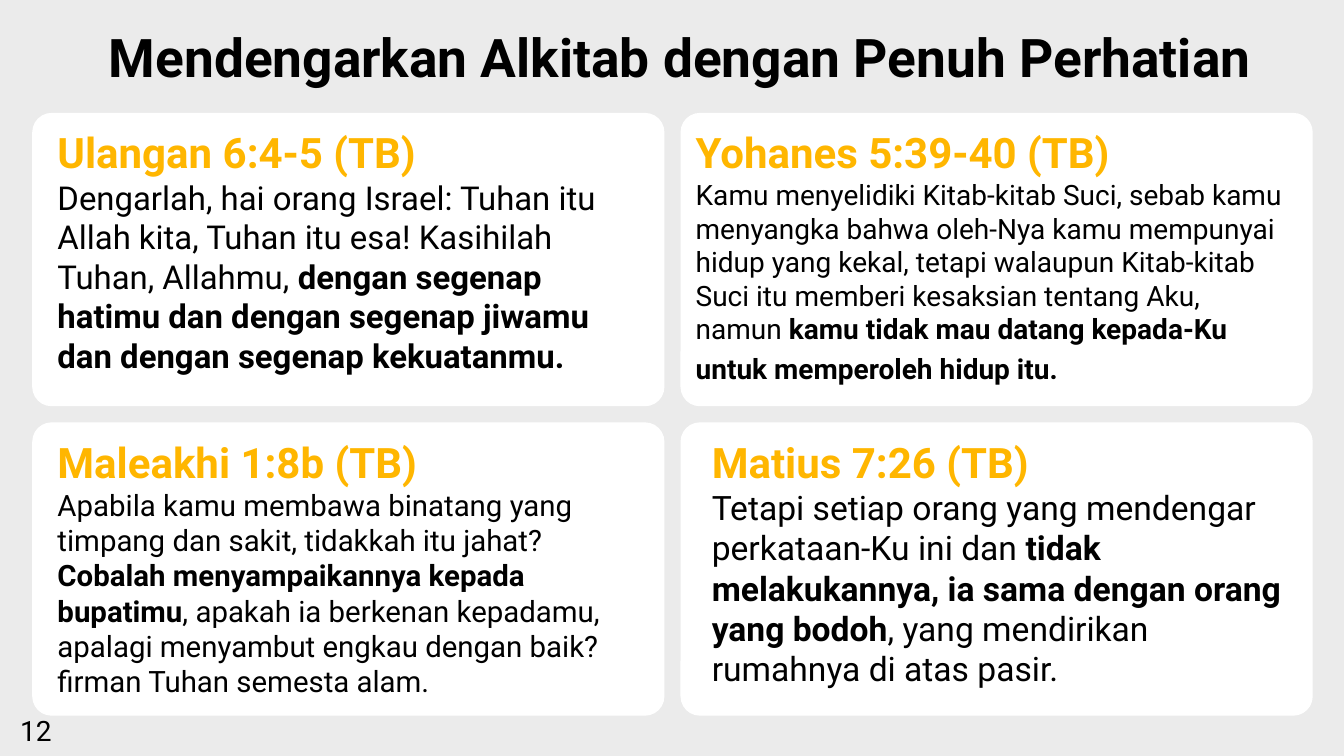
from dataclasses import dataclass

from pptx import Presentation
from pptx.dml.color import RGBColor
from pptx.enum.shapes import MSO_SHAPE
from pptx.enum.text import MSO_AUTO_SIZE, PP_ALIGN
from pptx.util import Inches, Pt

ROUNDED = MSO_SHAPE.ROUNDED_RECTANGLE
GROW = MSO_AUTO_SIZE.SHAPE_TO_FIT_TEXT
LEFT, CENTER = PP_ALIGN.LEFT, PP_ALIGN.CENTER


@dataclass(frozen=True)
class Theme:
    font: str = "Roboto"
    background: str = "EBEBEB"
    card: str = "FFFFFF"
    ink: str = "000000"
    accent: str = "FFB600"
    title_size: float = 38
    heading_size: float = 30
    large_size: float = 24
    wide_size: float = 23.5
    medium_size: float = 21
    small_size: float = 20


@dataclass(frozen=True)
class Grid:
    left: float = 0.32
    top: float = 1.12
    width: float = 6.27
    height: float = 2.91
    column_gap: float = 0.16
    row_gap: float = 0.16

    def cell(self, column, row):
        return (self.left + column * (self.width + self.column_gap),
                self.top + row * (self.height + self.row_gap))


@dataclass(frozen=True)
class Run:
    text: str
    size: float
    bold: bool = False
    color: str = Theme.ink


@dataclass(frozen=True)
class Verse:
    column: int
    row: int
    inset: float
    width: float
    height: float
    reference: str
    passage: list


class SlideBuilder:
    def __init__(self, slide, theme, grid):
        self.slide = slide
        self.theme = theme
        self.grid = grid
        fill = slide.background.fill
        fill.solid()
        fill.fore_color.rgb = RGBColor.from_string(theme.background)

    def card(self, column, row):
        left, top = self.grid.cell(column, row)
        box = map(Inches, (left, top, self.grid.width, self.grid.height))
        shape = self.slide.shapes.add_shape(ROUNDED, *box)
        shape.adjustments[0] = 0.066
        shape.shadow.inherit = False
        shape.fill.solid()
        shape.fill.fore_color.rgb = RGBColor.from_string(self.theme.card)
        shape.line.fill.background()

    def text(self, box, paragraphs, alignment=LEFT):
        shape = self.slide.shapes.add_textbox(*map(Inches, box))
        frame = shape.text_frame
        frame_format = {"margin_left": 0, "margin_right": 0, "margin_top": 0,
                        "margin_bottom": 0, "word_wrap": True, "auto_size": GROW}
        for name, value in frame_format.items():
            setattr(frame, name, value)
        for index, runs in enumerate(paragraphs):
            paragraph = frame.add_paragraph() if index else frame.paragraphs[0]
            paragraph.alignment = alignment
            for run in runs:
                self.run(paragraph, run)

    def run(self, paragraph, run):
        for index, line in enumerate(run.text.split("\n")):
            if index:
                paragraph.add_line_break()
            if not line:
                continue
            piece = paragraph.add_run()
            piece.text = line
            font_format = {"name": self.theme.font, "size": Pt(run.size), "bold": run.bold}
            for name, value in font_format.items():
                setattr(piece.font, name, value)
            piece.font.color.rgb = RGBColor.from_string(run.color)

    def verse(self, verse):
        left, top = self.grid.cell(verse.column, verse.row)
        heading = Run(verse.reference, self.theme.heading_size, True, self.theme.accent)
        self.text((left + verse.inset, top + 0.14, verse.width, verse.height),
                  [[heading], verse.passage])


def build_verses(theme):
    wide, small = theme.wide_size, theme.small_size
    medium, large = theme.medium_size, theme.large_size
    return [
        Verse(0, 0, 0.25, 5.86, 2.48, "Ulangan 6:4-5 (TB)", [
            Run("Dengarlah, hai orang Israel: Tuhan itu Allah kita, Tuhan itu esa! "
                "Kasihilah Tuhan, Allahmu, ", wide),
            Run("dengan segenap hatimu dan dengan segenap jiwamu "
                "dan dengan segenap kekuatanmu.", wide, True)]),
        Verse(1, 0, 0.15, 6, 2.59, "Yohanes 5:39-40 (TB)", [
            Run("Kamu menyelidiki Kitab-kitab Suci, sebab kamu menyangka bahwa "
                "oleh-Nya kamu mempunyai hidup yang kekal, tetapi walaupun Kitab-kitab "
                "Suci itu memberi kesaksian tentang Aku,\nnamun ", small),
            Run("kamu tidak mau datang kepada-Ku untuk memperoleh hidup itu.", small, True),
            Run(" ", large)]),
        Verse(0, 1, 0.25, 5.75, 2.63, "Maleakhi 1:8b (TB)", [
            Run("Apabila kamu membawa binatang yang timpang dan sakit, "
                "tidakkah itu jahat?\n", medium),
            Run("Cobalah menyampaikannya kepada bupatimu", medium, True),
            Run(", apakah ia berkenan kepadamu, apalagi menyambut engkau dengan baik? "
                "firman Tuhan semesta alam.", medium)]),
        Verse(1, 1, 0.31, 5.68, 2.61, "Matius 7:26 (TB)", [
            Run("Tetapi setiap orang yang mendengar perkataan-Ku ini dan ", large),
            Run("tidak melakukannya, ia sama dengan orang yang bodoh", large, True),
            Run(", yang mendirikan rumahnya di atas pasir.", large)]),
    ]


def main():
    presentation = Presentation()
    presentation.slide_width = Inches(13.33)
    presentation.slide_height = Inches(7.5)
    slide = presentation.slides.add_slide(presentation.slide_layouts[6])
    theme = Theme()
    builder = SlideBuilder(slide, theme, Grid())

    builder.text((0.2, 7.08, 1.11, 0.34), [[Run("12", theme.small_size)]])
    builder.text((0, 0.24, 13.49, 0.64),
                 [[Run("Mendengarkan Alkitab dengan Penuh Perhatian", theme.title_size, True)]],
                 CENTER)
    for verse in build_verses(theme):
        builder.card(verse.column, verse.row)
        builder.verse(verse)

    presentation.save("out.pptx")


if __name__ == "__main__":
    main()
